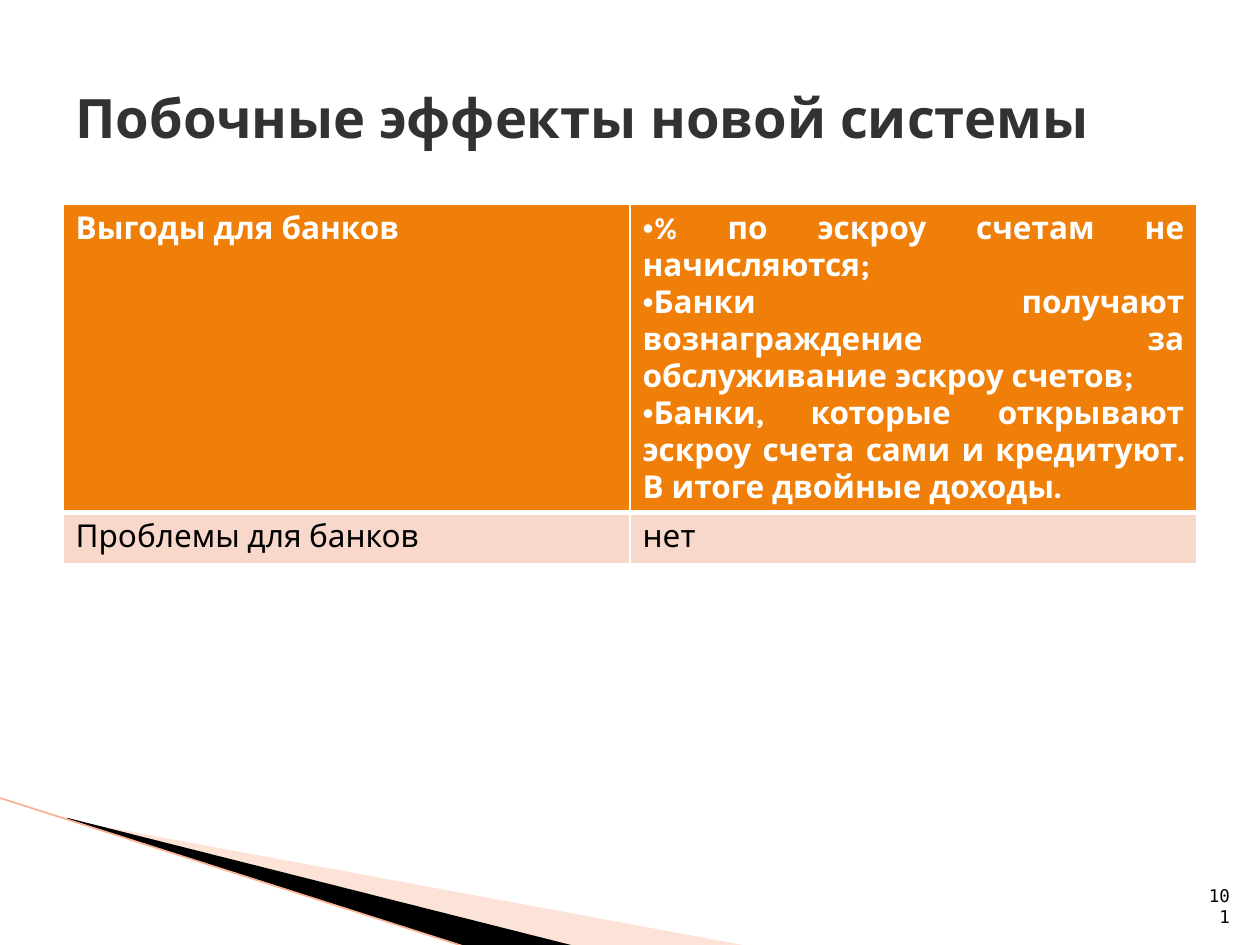
from lxml.etree import SubElement
from pptx import Presentation
from pptx.dml.color import RGBColor
from pptx.enum.shapes import MSO_CONNECTOR
from pptx.enum.text import MSO_ANCHOR, PP_ALIGN
from pptx.oxml import parse_xml
from pptx.oxml.ns import nsdecls, qn
from pptx.util import Inches, Pt

TITLE = "Побочные эффекты новой системы"
PAGE_NUMBER = "101"
BENEFITS = [
    "% по эскроу счетам не начисляются;",
    "Банки получают вознаграждение за обслуживание эскроу счетов;",
    "Банки, которые открывают эскроу счета сами и кредитуют. В итоге двойные доходы.",
]
ROWS = [
    (["Выгоды для банков"], BENEFITS),
    (["Проблемы для банков"], ["нет"]),
]

WHITE = RGBColor(0xFF, 0xFF, 0xFF)
BLACK = RGBColor(0, 0, 0)
TITLE_GREY = RGBColor(0x32, 0x32, 0x32)
ORANGE = RGBColor(0xF0, 0x7F, 0x09)
PALE_PINK = RGBColor(0xF9, 0xD8, 0xCC)
PEACH = RGBColor(0xFC, 0xB7, 0x9B)
EDGE_PEACH = RGBColor(0xF9, 0xB1, 0x92)

SLIDE_WIDTH, SLIDE_HEIGHT = 10, 7.5
MARGIN = SLIDE_WIDTH / 20
CONTENT_WIDTH = SLIDE_WIDTH - 2 * MARGIN
TABLE_TOP = 1.62
ROW_HEIGHTS = [2.43, 0.41]

# Corner points, fill, opacity in percent
WEDGES = [
    ([(0.55, 6.51), (5.95, 7.51), (4.56, 7.51), (0.55, 6.5)], PEACH, 40),
    ([(0.53, 6.49), (4.57, 7.51), (3.72, 7.52), (0.54, 6.5)], BLACK, 100),
]
EDGE = (-0.01, 6.33, 3.71, 7.52)


def write_text(frame, texts, size, color, font="Karla", bold=False,
               align=None, bullet=None):
    frame.word_wrap = True
    for index, text in enumerate(texts):
        paragraph = frame.paragraphs[0] if index == 0 else frame.add_paragraph()
        if align is not None:
            paragraph.alignment = align
        if bullet:
            properties = paragraph._p.get_or_add_pPr()
            properties.set("marL", "0")
            properties.set("indent", "0")
            SubElement(properties, qn("a:buFont")).set("typeface", "Arial")
            SubElement(properties, qn("a:buChar")).set("char", bullet)
        run = paragraph.add_run()
        run.text = text
        run.font.size = Pt(size)
        run.font.name = font
        run.font.bold = bold
        run.font.color.rgb = color


def set_borders(cell, bottom):
    """Give a cell white borders, 1 pt wide except for the bottom one."""
    properties = cell._tc.get_or_add_tcPr()
    for index, side in enumerate("LRTB"):
        width = Pt(bottom if side == "B" else 1)
        properties.insert(index, parse_xml(
            f'<a:ln{side} {nsdecls("a")} w="{width}"><a:solidFill>'
            f'<a:srgbClr val="{WHITE}"/></a:solidFill></a:ln{side}>'))


def add_wedge(slide, points, color, opacity):
    builder = slide.shapes.build_freeform(
        *(Inches(value) for value in points[0]), scale=1.0)
    builder.add_line_segments(
        [(Inches(x), Inches(y)) for x, y in points[1:]], close=True)
    wedge = builder.convert_to_shape()
    wedge.shadow.inherit = False
    wedge.line.fill.background()
    wedge.fill.solid()
    wedge.fill.fore_color.rgb = color
    if opacity < 100:
        color_element = wedge._element.spPr.find(qn("a:solidFill"))[0]
        SubElement(color_element, qn("a:alpha")).set("val", str(opacity * 1000))


def add_edge(slide):
    edge = slide.shapes.add_connector(
        MSO_CONNECTOR.STRAIGHT, *(Inches(value) for value in EDGE))
    edge.line.color.rgb = EDGE_PEACH
    edge.line.width = Pt(0.95)
    SubElement(edge._element.spPr, qn("a:effectLst"))


def add_effects_table(slide):
    table = slide.shapes.add_table(
        len(ROWS), 2, Inches(MARGIN), Inches(TABLE_TOP),
        Inches(CONTENT_WIDTH), Inches(sum(ROW_HEIGHTS))).table
    for row_index, row in enumerate(ROWS):
        table.rows[row_index].height = Inches(ROW_HEIGHTS[row_index])
        header = row_index == 0
        for column_index, texts in enumerate(row):
            cell = table.cell(row_index, column_index)
            cell.fill.solid()
            cell.fill.fore_color.rgb = ORANGE if header else PALE_PINK
            set_borders(cell, bottom=3 if header else 1)
            listed = len(texts) > 1
            write_text(cell.text_frame, texts, 18, WHITE if header else BLACK,
                       bold=header, bullet="•" if listed else None,
                       align=PP_ALIGN.JUSTIFY if listed else None)


def main():
    presentation = Presentation()
    presentation.slide_width = Inches(SLIDE_WIDTH)
    presentation.slide_height = Inches(SLIDE_HEIGHT)
    slide = presentation.slides.add_slide(presentation.slide_layouts[5])

    for points, color, opacity in WEDGES:
        add_wedge(slide, points, color, opacity)
    add_edge(slide)

    title = slide.shapes.title
    title.left, title.top = Inches(MARGIN), Inches(0.3)
    title.width, title.height = Inches(CONTENT_WIDTH), Inches(1.25)
    title.text_frame.vertical_anchor = MSO_ANCHOR.MIDDLE
    write_text(title.text_frame, [TITLE], 31, TITLE_GREY, bold=True,
               align=PP_ALIGN.JUSTIFY)

    add_effects_table(slide)

    number = slide.shapes.add_textbox(
        Inches(9.46), Inches(7.01), Inches(0.4), Inches(0.4))
    number.text_frame.vertical_anchor = MSO_ANCHOR.BOTTOM
    write_text(number.text_frame, [PAGE_NUMBER], 10, BLACK,
               font="DejaVu Sans Mono", align=PP_ALIGN.RIGHT)

    presentation.save("out.pptx")


if __name__ == "__main__":
    main()
